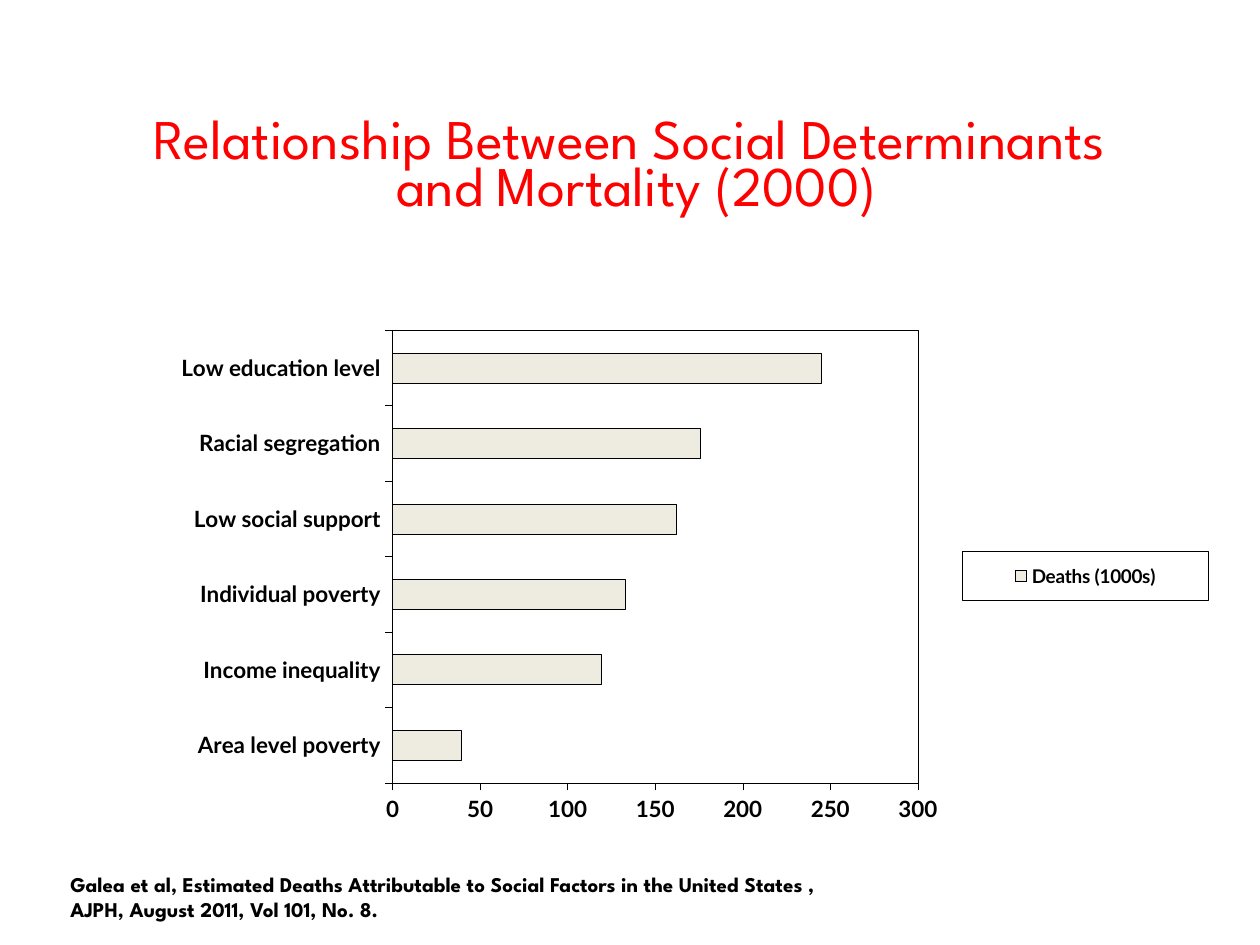
from lxml import etree
from pptx import Presentation
from pptx import util as u
from pptx.chart import data as chart_data
from pptx.dml.color import RGBColor
from pptx.enum import chart as ch
from pptx.enum import text as tx
from pptx.oxml import parse_xml
from pptx.oxml.ns import nsdecls, qn

# Content
TITLE = ["Relationship Between Social Determinants\v and Mortality (2000)"]
SOURCE = [
    "Galea et al, Estimated Deaths Attributable to Social Factors in the United States ,",
    "AJPH, August 2011, Vol 101, No. 8.",
]
SERIES = "Deaths (1000s)"
DEATHS = [  # listed from the bottom bar upwards
    ("Area level poverty", 39),
    ("Income inequality", 119),
    ("Individual poverty", 133),
    ("Low social support", 162),
    ("Racial segregation", 176),
    ("Low education level", 245),
]

THEME = {
    "heading_font": "League Spartan", "chart_font": "Lato",
    "red": "FF0000", "black": "000000", "bar": "EEECE1",
    "title": 32, "source": 12, "axis": 12.8, "legend": 10.8, "line": 0.23,
}

# Chart-relative x, y, width, height
PLOT_FRAME = (0.26, 0.03, 0.47, 0.82)
LEGEND_FRAME = (0.77, 0.43, 0.22, 0.09)


def style_font(font, size, color="black", bold=True, name="chart_font"):
    font.name = THEME[name]
    font.size = u.Pt(size)
    font.bold = bold
    font.color.rgb = RGBColor.from_string(THEME[color])


def add_text(slide, paragraphs, frame, *, size, color="black", bold=False, wrap=True,
             align=tx.PP_ALIGN.LEFT, anchor=tx.MSO_ANCHOR.TOP, spacing=None):
    box = slide.shapes.add_textbox(*map(u.Inches, frame))
    body = box.text_frame
    body.word_wrap = wrap
    body.vertical_anchor = anchor
    body.text = "\n".join(paragraphs)
    for para in body.paragraphs:
        para.alignment = align
        para.line_spacing = spacing
        for span in para.runs:
            style_font(span.font, size, color, bold, "heading_font")
    return box


def style_line(line):
    line.color.rgb = RGBColor.from_string(THEME["black"])
    line.width = u.Pt(THEME["line"])


def manual_layout(frame, inner=False):
    target = '<c:layoutTarget val="inner"/>' if inner else ""
    modes = "".join(f'<c:{axis}Mode val="edge"/>' for axis in "xy")
    sizes = "".join(f'<c:{key} val="{value}"/>' for key, value in zip("xywh", frame))
    return parse_xml(f'<c:layout {nsdecls("c")}><c:manualLayout>{target}{modes}{sizes}'
                     "</c:manualLayout></c:layout>")


def outline_properties():
    return parse_xml(
        f'<c:spPr {nsdecls("c", "a")}><a:noFill/><a:ln w="{u.Pt(THEME["line"])}">'
        f'<a:solidFill><a:srgbClr val="{THEME["black"]}"/></a:solidFill></a:ln></c:spPr>')


def drop(parent, tag):
    for child in parent.findall(qn(tag)):
        parent.remove(child)


def add_deaths_chart(slide, frame):
    data = chart_data.CategoryChartData(number_format="#,##0")
    data.categories = [name for name, _ in DEATHS]
    data.add_series(SERIES, [value for _, value in DEATHS])
    chart = slide.shapes.add_chart(
        ch.XL_CHART_TYPE.BAR_CLUSTERED, *map(u.Inches, frame), data).chart
    chart.has_title = False
    style_font(chart.font, THEME["axis"])

    # Bars
    plot = chart.plots[0]
    plot.gap_width = 150
    plot.vary_by_categories = False
    bars = plot.series[0].format
    bars.fill.solid()
    bars.fill.fore_color.rgb = RGBColor.from_string(THEME["bar"])
    style_line(bars.line)

    # Axes
    for axis in (chart.category_axis, chart.value_axis):
        axis.has_major_gridlines = False
        axis.major_tick_mark = ch.XL_TICK_MARK.OUTSIDE
        axis.minor_tick_mark = ch.XL_TICK_MARK.NONE
        style_font(axis.tick_labels.font, THEME["axis"])
        style_line(axis.format.line)
    values = chart.value_axis
    values.minimum_scale, values.maximum_scale, values.major_unit = 0, 300, 50
    values.tick_labels.number_format = "#,##0"
    values.tick_labels.number_format_is_linked = False

    # Legend
    chart.has_legend = True
    legend = chart.legend
    legend.position = ch.XL_LEGEND_POSITION.RIGHT
    legend.include_in_layout = False
    style_font(legend.font, THEME["legend"])

    # Placement and outlines of plot and legend
    area = chart.element.find(".//" + qn("c:plotArea"))
    drop(area, "c:layout")
    area.insert(0, manual_layout(PLOT_FRAME, inner=True))
    area.append(outline_properties())
    key = chart.element.find(".//" + qn("c:legend"))
    drop(key, "c:layout")
    key.find(qn("c:legendPos")).addnext(manual_layout(LEGEND_FRAME))
    key.find(qn("c:overlay")).addnext(outline_properties())


def main():
    deck = Presentation()
    deck.slide_width, deck.slide_height = u.Inches(10), u.Inches(7.5)
    slide = deck.slides.add_slide(deck.slide_layouts[6])

    add_text(slide, TITLE, (0, 0.83, 10, 1.02), size=THEME["title"], color="red",
             align=tx.PP_ALIGN.CENTER, anchor=tx.MSO_ANCHOR.MIDDLE, spacing=0.7)
    add_deaths_chart(slide, (0.81, 2.49, 8.87, 4.38))
    add_text(slide, SOURCE, (0.46, 6.87, 6.67, 0.5), size=THEME["source"], bold=True,
             wrap=False)

    deck.save("out.pptx")


if __name__ == "__main__":
    main()
